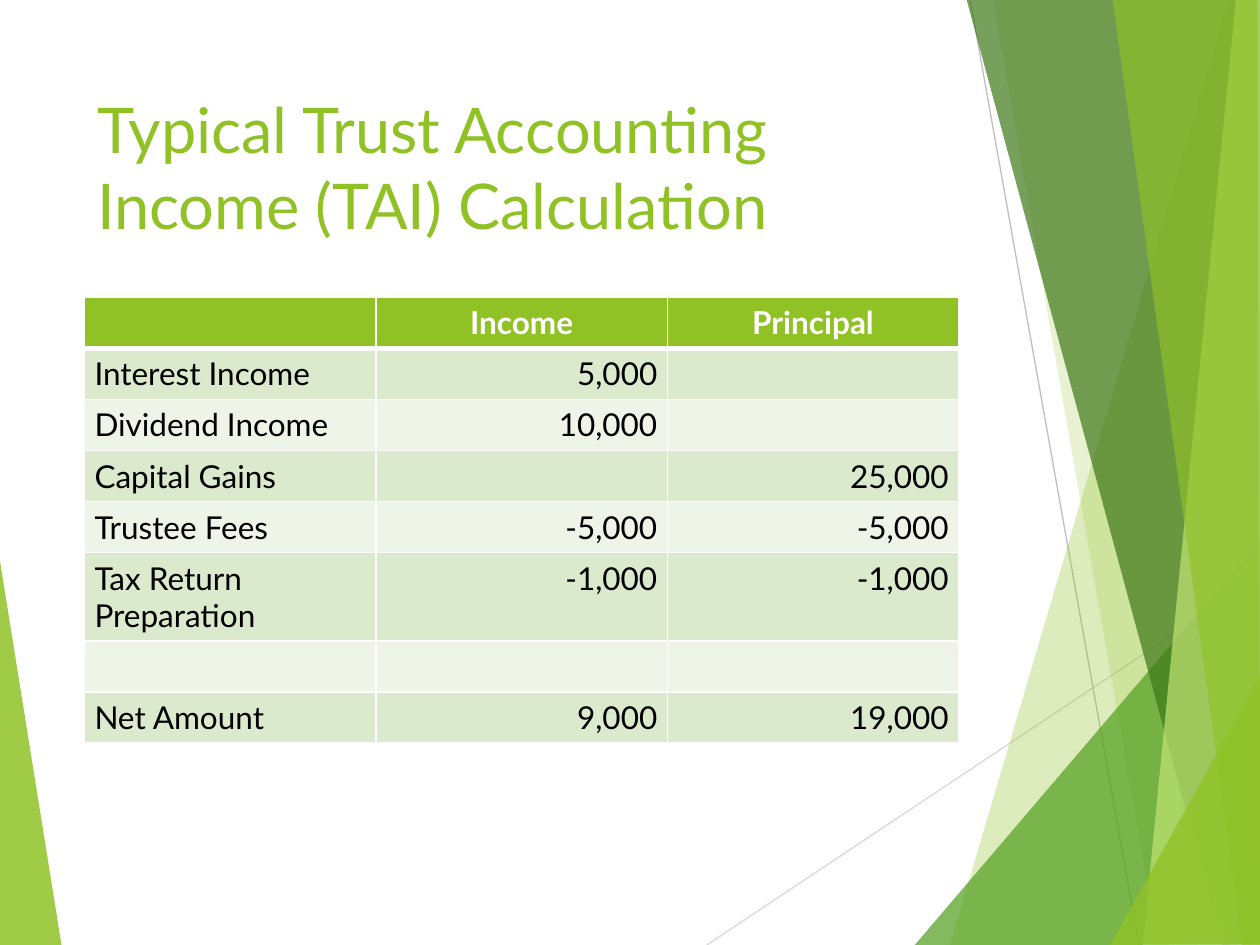
from lxml import etree
from pptx import Presentation
from pptx.dml.color import RGBColor
from pptx.enum.shapes import MSO_CONNECTOR as Connector
from pptx.enum.text import MSO_ANCHOR as Anchor, MSO_AUTO_SIZE as AutoSize, PP_ALIGN as Align
from pptx.oxml import parse_xml
from pptx.oxml.ns import nsdecls, qn
from pptx.util import Inches, Pt

FONT = "Lato"
GREEN = "90C226"
WHITE = "FFFFFF"
BLACK = "000000"
BANDS = ("EEF4E8", "DBE9CD")
TABLE_WIDTH = 6.94
ROW_HEIGHT = 3.24 / 8
TALL_ROW_HEIGHT = 0.7

LEFT_WEDGE = ([(-0.01, 4.39), (0.49, 7.51), (-0.01, 7.5)], GREEN, 85)
LINES = [
    ((5.61, 7.5), (10.01, 4.57), "D9D9D9"),
    ((7.7, 0), (9.04, 7.5), "BFBFBF"),
]
RIGHT_FACETS = [
    ([(9.75, 0), (7.54, 7.5), (10.02, 7.51), (10.01, 0.01)], GREEN, 30),
    ([(7.88, -0.01), (9.19, 7.5), (10.01, 7.5), (10.01, -0.01)], GREEN, 20),
    ([(7.26, 7.5), (10, 4.29), (10.01, 7.5)], "54A021", 72),
    ([(7.67, -0.01), (9.7, 7.5), (10.01, 7.49), (10.01, -0.01)], "3F7819", 70),
    ([(9.81, -0.01), (9.07, 7.5), (10.01, 7.5), (10, -0.01)], "C0E474", 70),
    ([(8.83, -0.01), (9.86, 7.5), (10, 7.5), (9.98, -0.01)], GREEN, 65),
    ([(8.81, 7.5), (10.01, 5.35), (10.01, 7.49)], GREEN, 80),
]
ROWS = [
    ("", "Income", "Principal"),
    ("Interest Income", "5,000", ""),
    ("Dividend Income", "10,000", ""),
    ("Capital Gains", "", "25,000"),
    ("Trustee Fees", "-5,000", "-5,000"),
    ("Tax Return Preparation", "-1,000", "-1,000"),
    ("", "", ""),
    ("Net Amount", "9,000", "19,000"),
]


def color(value):
    """Turn a hex string into a colour."""
    return RGBColor.from_string(value)


def add_span(para, text, size, ink, bold=False):
    """Add one formatted run to a paragraph."""
    span = para.add_run()
    span.text = text
    span.font.name = FONT
    span.font.size = Pt(size)
    span.font.bold = bold
    span.font.color.rgb = color(ink)


def add_facet(page, points, fill, opacity):
    """Draw a translucent polygon."""
    corners = [(Inches(x), Inches(y)) for x, y in points]
    builder = page.shapes.build_freeform(*corners[0])
    builder.add_line_segments(corners[1:], close=True)
    facet = builder.convert_to_shape()
    facet.shadow.inherit = False
    facet.fill.solid()
    facet.fill.fore_color.rgb = color(fill)
    facet.line.fill.background()
    tint = facet.fill._xPr.find(qn("a:solidFill"))[0]
    etree.SubElement(tint, qn("a:alpha"), val=str(opacity * 1000))


def add_line(page, start, end, ink):
    """Draw a thin straight line."""
    ends = [Inches(value) for value in start + end]
    line = page.shapes.add_connector(Connector.STRAIGHT, *ends)
    line.line.color.rgb = color(ink)
    line.line.width = Pt(0.75)
    etree.SubElement(line._element.spPr, qn("a:effectLst"))


def add_title(page, text):
    """Place and fill the title placeholder."""
    title = page.shapes.title
    title.left, title.top = Inches(0.67), Inches(0.67)
    title.width, title.height = Inches(6.94), Inches(1.44)
    frame = title.text_frame
    frame.word_wrap = True
    frame.auto_size = AutoSize.NONE
    frame.vertical_anchor = Anchor.TOP
    para = frame.paragraphs[0]
    para.alignment = Align.LEFT
    add_span(para, text, 36, GREEN)


def set_borders(cell, widths):
    """Give a cell white borders, with widths in points by side."""
    properties = cell._tc.get_or_add_tcPr()
    for side, width in widths.items():
        properties.append(parse_xml(
            f'<a:ln{side} {nsdecls("a")} w="{Pt(width)}"><a:solidFill>'
            f'<a:srgbClr val="{WHITE}"/></a:solidFill></a:ln{side}>'))


def fill_cell(cell, text, row, column):
    """Format one table cell by its row and column."""
    header = row == 0
    set_borders(cell, {"L": 1, "R": 1, "T": 3 if row == 1 else 1, "B": 3 if header else 1})
    cell.fill.solid()
    cell.fill.fore_color.rgb = color(GREEN if header else BANDS[row % 2])
    cell.margin_left = cell.margin_right = Inches(0.08)
    cell.margin_top = cell.margin_bottom = Inches(0.05)
    para = cell.text_frame.paragraphs[0]
    if header:
        para.alignment = Align.CENTER
    else:
        para.alignment = Align.RIGHT if column else Align.LEFT
    if text:
        add_span(para, text, 18, WHITE if header else BLACK, header)


def add_amounts(page):
    """Build the income and principal table."""
    height = ROW_HEIGHT * (len(ROWS) - 1) + TALL_ROW_HEIGHT
    box = page.shapes.add_table(len(ROWS), 3, Inches(0.67), Inches(2.36),
                                Inches(TABLE_WIDTH), Inches(height))
    table = box.table
    for column in table.columns:
        column.width = Inches(TABLE_WIDTH / 3)
    for row, texts in enumerate(ROWS):
        tall = texts[0] == "Tax Return Preparation"
        table.rows[row].height = Inches(TALL_ROW_HEIGHT if tall else ROW_HEIGHT)
        for column, text in enumerate(texts):
            fill_cell(table.cell(row, column), text, row, column)


def main():
    """Build and save the slide."""
    deck = Presentation()
    deck.slide_width, deck.slide_height = Inches(10), Inches(7.5)
    page = deck.slides.add_slide(deck.slide_layouts[5])
    add_facet(page, *LEFT_WEDGE)
    for line in LINES:
        add_line(page, *line)
    for facet in RIGHT_FACETS:
        add_facet(page, *facet)
    add_title(page, "Typical Trust Accounting Income (TAI) Calculation")
    add_amounts(page)
    deck.save("out.pptx")


if __name__ == "__main__":
    main()
